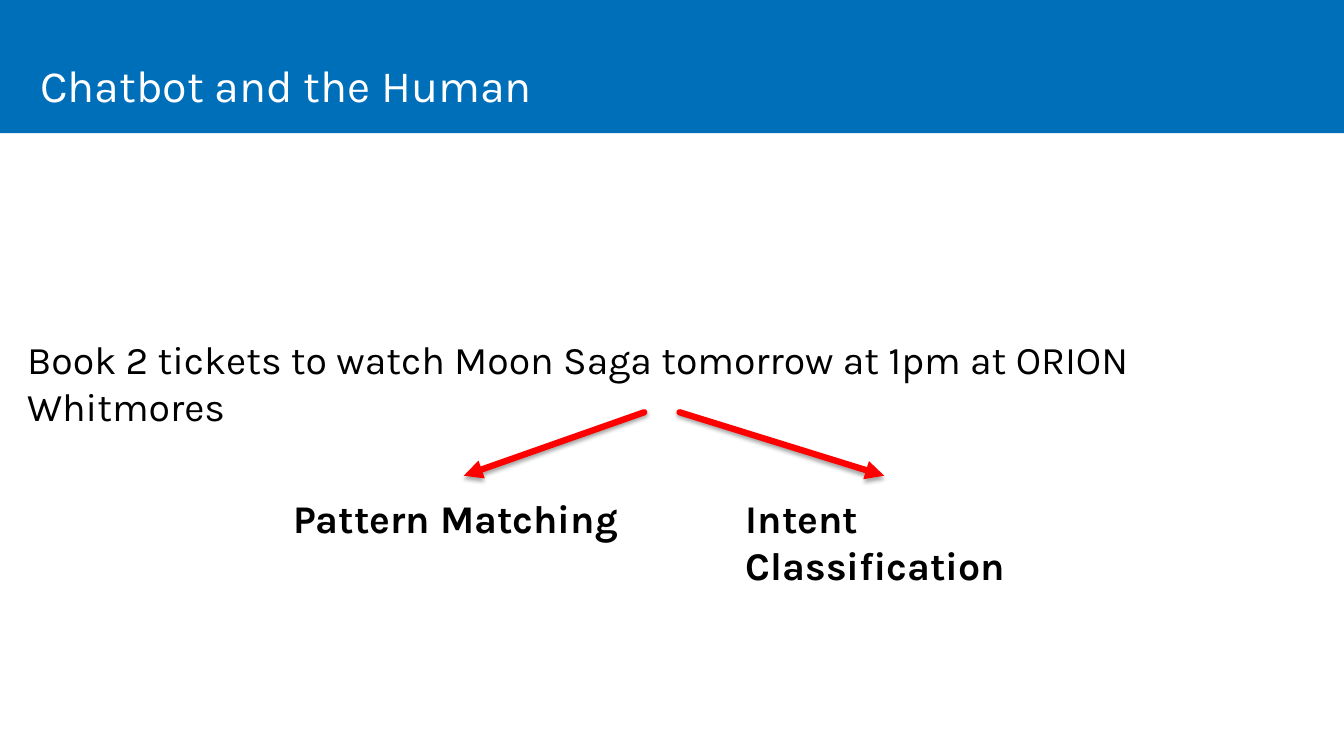
"""Build the slide that splits a chatbot request into two approaches."""
import lxml.etree
import pptx
import pptx.dml.color
import pptx.enum.shapes
import pptx.enum.text
import pptx.oxml
import pptx.util

Inches = pptx.util.Inches
COLORS = {"banner": "006FBA", "title": "FFFFFF", "text": "000000", "arrow": "FF0000"}
TITLE = ("Chatbot and the Human", (0.3, 0.5, 9.4, 0.67))
REQUEST = ("Book 2 tickets to watch Moon Saga tomorrow at 1pm at ORION Whitmores",
           (0.17, 3.28, 12.99, 0.57))
APPROACHES = [
    {"label": "Pattern Matching", "left": 2.81, "width": 3.46, "start": 6.39, "end": 4.6},
    {"label": "Intent Classification", "left": 7.3, "width": 3.94, "start": 6.74, "end": 8.77},
]
LABEL_TOP, LABEL_HEIGHT = 4.85, 0.57
ARROW_TOP, ARROW_BOTTOM = 4.09, 4.72
BANNER_HEIGHT = 1.32
FORMATS = {
    "title": {"name": "Karla", "size": pptx.util.Pt(32), "bold": False},
    "request": {"name": "Karla", "size": pptx.util.Pt(28), "bold": False},
    "label": {"name": "Karla", "size": pptx.util.Pt(28), "bold": True},
}
DRAWING = "http://schemas.openxmlformats.org/drawingml/2006/main"
SHADOW = f"""<a:effectLst xmlns:a="{DRAWING}">
<a:outerShdw blurRad="38100" dist="25400" dir="5400000" rotWithShape="0">
<a:srgbClr val="000000"><a:alpha val="35000"/></a:srgbClr>
</a:outerShdw></a:effectLst>"""


def color(name):
    return pptx.dml.color.RGBColor.from_string(COLORS[name])


def write(box, text, style, color_name, anchor):
    frame = box.text_frame
    frame.word_wrap = True
    frame.auto_size = pptx.enum.text.MSO_AUTO_SIZE.NONE
    frame.vertical_anchor = anchor
    para = frame.paragraphs[0]
    para.alignment = pptx.enum.text.PP_ALIGN.LEFT
    span = para.add_run()
    span.text = text
    for key, value in FORMATS[style].items():
        setattr(span.font, key, value)
    span.font.color.rgb = color(color_name)


def add_text(page, text, place, style):
    box = page.shapes.add_textbox(*map(Inches, place))
    write(box, text, style, "text", pptx.enum.text.MSO_ANCHOR.TOP)


def add_arrow(page, start, end):
    ends = (start, ARROW_TOP, end, ARROW_BOTTOM)
    arrow = page.shapes.add_connector(
        pptx.enum.shapes.MSO_CONNECTOR.STRAIGHT, *map(Inches, ends))
    arrow.line.color.rgb = color("arrow")
    arrow.line.width = pptx.util.Pt(4.5)
    outline = arrow.line._get_or_add_ln()
    outline.set("cap", "rnd")
    lxml.etree.SubElement(outline, f"{{{DRAWING}}}tailEnd", type="triangle")
    arrow._element.spPr.append(pptx.oxml.parse_xml(SHADOW))


def add_header(page, width):
    banner = page.shapes.add_shape(
        pptx.enum.shapes.MSO_SHAPE.RECTANGLE, 0, 0, width, Inches(BANNER_HEIGHT))
    banner.shadow.inherit = False
    banner.fill.solid()
    banner.fill.fore_color.rgb = color("banner")
    banner.line.fill.background()
    title = page.shapes.title
    title._element.addprevious(banner._element)
    text, place = TITLE
    for side, length in zip(("left", "top", "width", "height"), place):
        setattr(title, side, Inches(length))
    write(title, text, "title", "title", pptx.enum.text.MSO_ANCHOR.MIDDLE)


def main():
    deck = pptx.Presentation()
    deck.slide_width, deck.slide_height = Inches(13.33), Inches(7.5)
    page = deck.slides.add_slide(deck.slide_layouts.get_by_name("Title Only"))
    add_header(page, deck.slide_width)
    add_text(page, *REQUEST, "request")
    for approach in APPROACHES:
        place = (approach["left"], LABEL_TOP, approach["width"], LABEL_HEIGHT)
        add_text(page, approach["label"], place, "label")
        add_arrow(page, approach["start"], approach["end"])
    deck.save("out.pptx")


if __name__ == "__main__":
    main()
